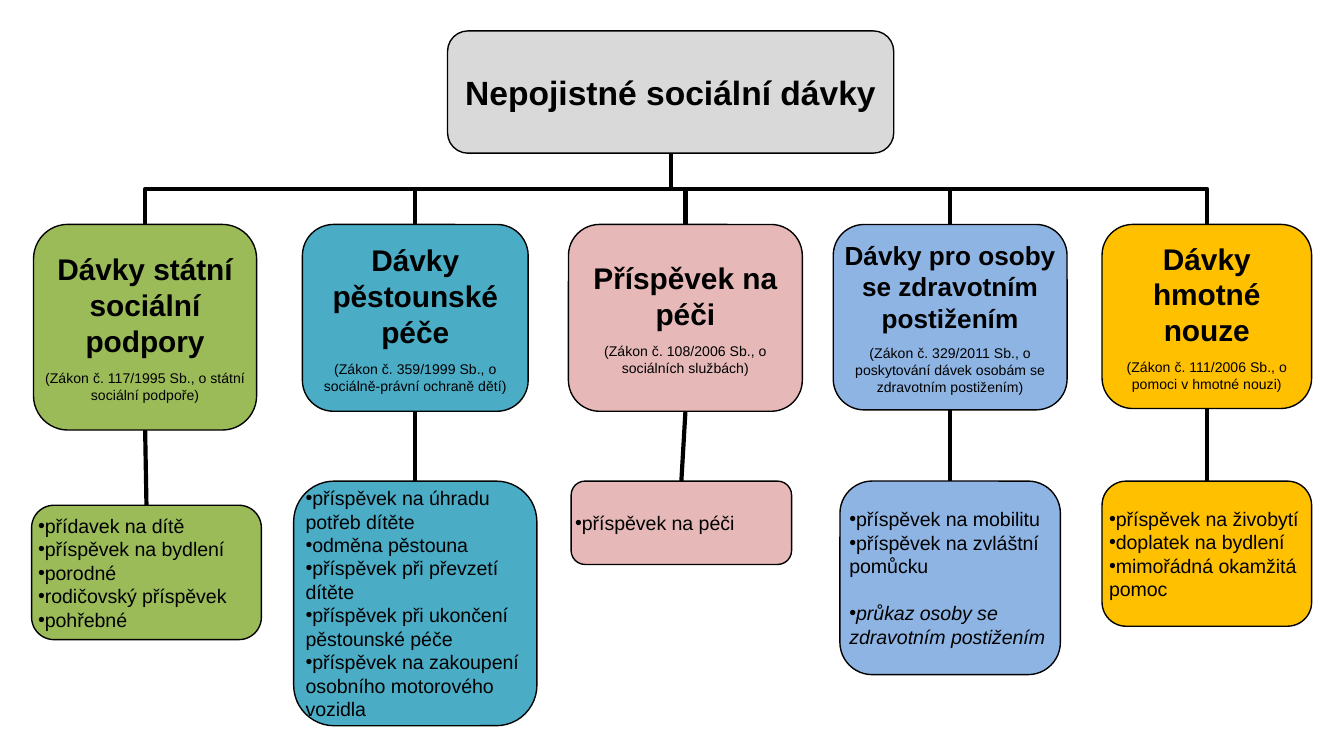
from pptx import Presentation
from pptx.dml.color import RGBColor
from pptx.enum.shapes import MSO_CONNECTOR, MSO_SHAPE
from pptx.enum.text import MSO_ANCHOR, PP_ALIGN
from pptx.oxml.ns import qn
from pptx.util import Inches, Pt
from lxml.etree import SubElement

THEME = dict(
    font="Arial", ink="000000", root="D9D9D9", green="9BBB59", teal="4BACC6",
    pink="E6B9B8", blue="8EB4E3", amber="FFC000",
    root_size=18, head_size=16, law_size=7.5, item_size=10.5,
    outline=0.75, link=2.25, law_gap=6, group_gap=12.5,
)

WIDTH = 10
HEIGHT = WIDTH * 9 / 16
ROOT_ROW, HEAD_ROW, ITEM_ROW = 0.23, 1.67, 3.58
ROOT = dict(text="Nepojistné sociální dávky", centre=4.99, size=(3.32, 0.91))

# Centres and sizes in inches: "head" is the benefit, "list" its items.
BRANCHES = [
    dict(title="Dávky státní sociální podpory", color="green",
         law="(Zákon č. 117/1995 Sb., o státní sociální podpoře)",
         items=["přídavek na dítě", "příspěvek na bydlení", "porodné",
                "rodičovský příspěvek", "pohřebné"],
         head=(1.08, 1.66, 1.53), list=(1.09, 1.71, 1.0), drop=0.18),
    dict(title="Dávky pěstounské péče", color="teal",
         law="(Zákon č. 359/1999 Sb., o sociálně-právní ochraně dětí)",
         items=["příspěvek na úhradu potřeb dítěte", "odměna pěstouna",
                "příspěvek při převzetí dítěte",
                "příspěvek při ukončení pěstounské péče",
                "příspěvek na zakoupení osobního motorového vozidla"],
         head=(3.09, 1.68, 1.39), list=(3.09, 1.81, 1.82)),
    dict(title="Příspěvek na péči", color="pink",
         law="(Zákon č. 108/2006 Sb., o sociálních službách)",
         items=["příspěvek na péči"],
         head=(5.1, 1.74, 1.39), list=(5.07, 1.64, 0.62)),
    dict(title="Dávky pro osoby se zdravotním postižením", color="blue",
         law="(Zákon č. 329/2011 Sb., o poskytování dávek osobám "
             "se zdravotním postižením)",
         items=["příspěvek na mobilitu", "příspěvek na zvláštní pomůcku"],
         extra="průkaz osoby se zdravotním postižením", title_size=14,
         head=(7.07, 1.74, 1.38), list=(7.07, 1.64, 1.44)),
    dict(title="Dávky hmotné nouze", color="amber",
         law="(Zákon č. 111/2006 Sb., o pomoci v hmotné nouzi)",
         items=["příspěvek na živobytí", "doplatek na bydlení",
                "mimořádná okamžitá pomoc"],
         head=(8.98, 1.56, 1.37), list=(8.98, 1.56, 1.08)),
]


def color(name):
    return RGBColor.from_string(THEME[name])


def add_box(page, centre, top, width, height, fill):
    box = page.shapes.add_shape(
        MSO_SHAPE.ROUNDED_RECTANGLE, Inches(centre - width / 2), Inches(top),
        Inches(width), Inches(height))
    box.shadow.inherit = False
    box.fill.solid()
    box.fill.fore_color.rgb = color(fill)
    box.line.color.rgb = color("ink")
    box.line.width = Pt(THEME["outline"])
    frame = box.text_frame
    frame.word_wrap = True
    frame.vertical_anchor = MSO_ANCHOR.MIDDLE
    frame.margin_left = frame.margin_right = 0
    frame.margin_top = frame.margin_bottom = 0
    return box


def add_text(box, text, size, bold=False, italic=False, bullet=False, gap=0):
    """Append a paragraph, using the empty first one if it is still free."""
    frame = box.text_frame
    para = frame.paragraphs[0] if not frame.text else frame.add_paragraph()
    para.alignment = PP_ALIGN.LEFT if bullet else PP_ALIGN.CENTER
    para.space_before = Pt(gap)
    if bullet:
        props = para._p.get_or_add_pPr()
        SubElement(props, qn("a:buFont"), typeface=THEME["font"])
        SubElement(props, qn("a:buChar"), char="•")
    span = para.add_run()
    span.text = text
    span.font.name = THEME["font"]
    span.font.size = Pt(size)
    span.font.bold, span.font.italic = bold, italic
    span.font.color.rgb = color("ink")


def add_link(page, kind, *ends):
    link = page.shapes.add_connector(kind, *map(Inches, ends))
    link.line.color.rgb = color("ink")
    link.line.width = Pt(THEME["link"])
    SubElement(link._element.spPr, qn("a:effectLst"))
    return link


def add_elbow(page, x1, y1, x2, y2):
    """Draw a down-across-down elbow: a level one turned by 90 degrees."""
    middle_x, middle_y = (x1 + x2) / 2, (y1 + y2) / 2
    half_run, half_fall = (x2 - x1) / 2, (y2 - y1) / 2
    link = add_link(page, MSO_CONNECTOR.ELBOW,
                    middle_x - half_fall, middle_y + half_run,
                    middle_x + half_fall, middle_y - half_run)
    link._element.spPr.find(qn("a:xfrm")).set("rot", str(90 * 60000))


def add_links(page):
    root_bottom = ROOT_ROW + ROOT["size"][1]
    for branch in BRANCHES:
        centre, _, height = branch["head"]
        add_elbow(page, ROOT["centre"], root_bottom, centre, HEAD_ROW)
        add_link(page, MSO_CONNECTOR.STRAIGHT, centre, HEAD_ROW + height,
                 branch["list"][0], ITEM_ROW + branch.get("drop", 0))


def add_branch(page, branch):
    centre, *size = branch["head"]
    head = add_box(page, centre, HEAD_ROW, *size, branch["color"])
    add_text(head, branch["title"],
             branch.get("title_size", THEME["head_size"]), bold=True)
    add_text(head, branch["law"], THEME["law_size"], gap=THEME["law_gap"])

    centre, *size = branch["list"]
    top = ITEM_ROW + branch.get("drop", 0)
    items = add_box(page, centre, top, *size, branch["color"])
    for item in branch["items"]:
        add_text(items, item, THEME["item_size"], bullet=True)
    if "extra" in branch:
        add_text(items, branch["extra"], THEME["item_size"], bullet=True,
                 italic=True, gap=THEME["group_gap"])


def main():
    deck = Presentation()
    deck.slide_width, deck.slide_height = Inches(WIDTH), Inches(HEIGHT)
    page = deck.slides.add_slide(deck.slide_layouts[6])
    add_links(page)
    root = add_box(page, ROOT["centre"], ROOT_ROW, *ROOT["size"], "root")
    add_text(root, ROOT["text"], THEME["root_size"], bold=True)
    for branch in BRANCHES:
        add_branch(page, branch)
    deck.save("out.pptx")


if __name__ == "__main__":
    main()
